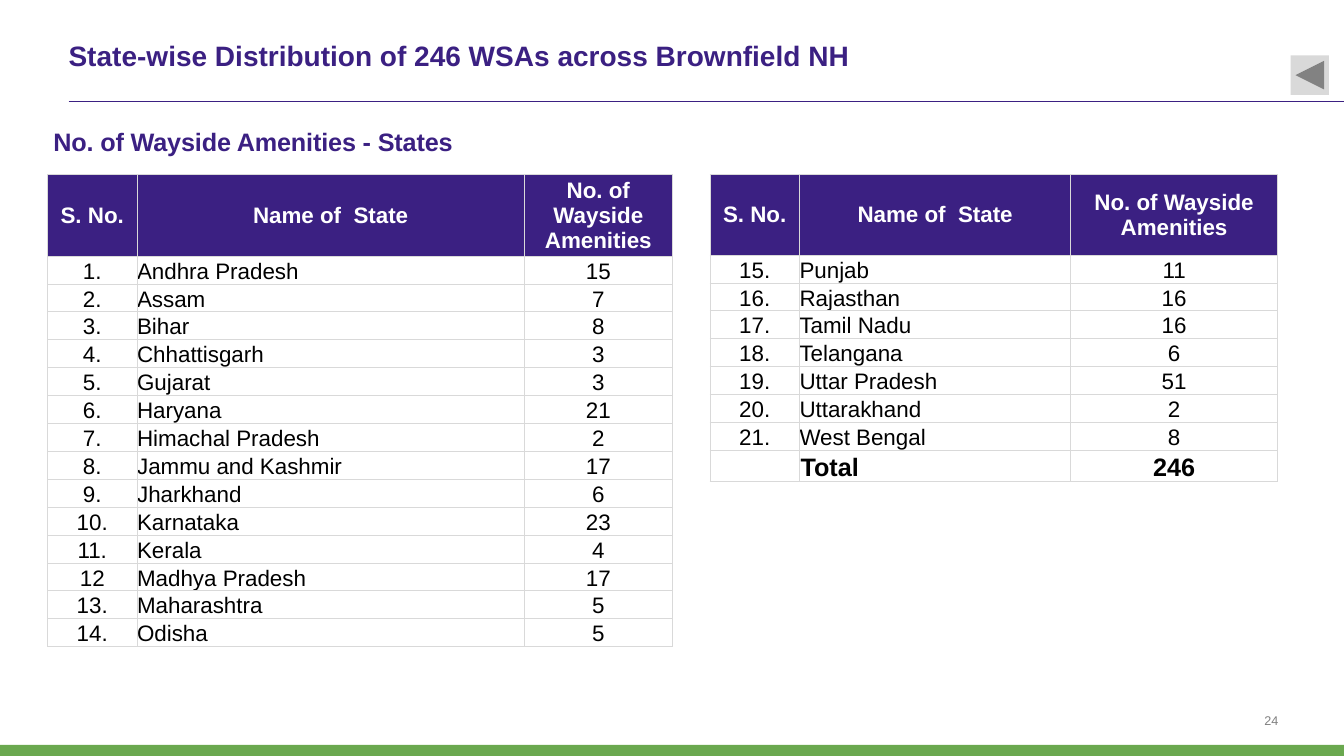
from pptx import Presentation
from pptx.dml.color import RGBColor
from pptx.enum.shapes import MSO_CONNECTOR, MSO_SHAPE
from pptx.enum.text import MSO_ANCHOR, MSO_AUTO_SIZE, PP_ALIGN
from pptx.oxml import parse_xml
from pptx.oxml.ns import nsdecls
from pptx.util import Pt

EMU_PER_PX = 9144  # 100 px to the inch
PURPLE, GREEN, GREY, LIGHT_GREY = "3B2082", "6AA84F", "808080", "D9D9D9"
WHITE, BLACK = "FFFFFF", "000000"
LEFT, CENTER, RIGHT = PP_ALIGN.LEFT, PP_ALIGN.CENTER, PP_ALIGN.RIGHT
MARGIN_NAMES = ("margin_left", "margin_top", "margin_right", "margin_bottom")
NO_MARGINS, THIN_MARGINS = (0, 0, 0, 0), (1, 1, 1, 0)

HEADERS = ["S. No.", "Name of  State", "No. of Wayside Amenities"]
AMENITIES = [
    ("Andhra Pradesh", 15), ("Assam", 7), ("Bihar", 8), ("Chhattisgarh", 3),
    ("Gujarat", 3), ("Haryana", 21), ("Himachal Pradesh", 2),
    ("Jammu and Kashmir", 17), ("Jharkhand", 6), ("Karnataka", 23),
    ("Kerala", 4), ("Madhya Pradesh", 17), ("Maharashtra", 5), ("Odisha", 5),
    ("Punjab", 11), ("Rajasthan", 16), ("Tamil Nadu", 16), ("Telangana", 6),
    ("Uttar Pradesh", 51), ("Uttarakhand", 2), ("West Bengal", 8),
]
LEFT_TABLE_STATES = 14


def px(length):
    return length * EMU_PER_PX


def color(hex_string):
    return RGBColor.from_string(hex_string)


def set_attributes(target, values):
    for name, value in values.items():
        setattr(target, name, value)


def margins(lengths):
    return {name: px(length) for name, length in zip(MARGIN_NAMES, lengths)}


class SlideBuilder:
    """Holds the font and the current slide."""

    def __init__(self, slide, font_name="Arial"):
        self.slide = slide
        self.shapes = slide.shapes
        self.font_name = font_name

    def fill_text(self, text_frame, text, size, hex_color, bold=False, align=LEFT, spacing=0):
        """Fill the first paragraph; spacing is in hundredths of a point."""
        paragraph = text_frame.paragraphs[0]
        paragraph.alignment = align
        run = paragraph.add_run()
        run.text = text
        set_attributes(run.font, {"name": self.font_name, "size": Pt(size), "bold": bold})
        run.font.color.rgb = color(hex_color)
        if spacing:
            run._r.get_or_add_rPr().set("spc", str(spacing))

    def title(self, box, text, size):
        title = self.shapes.title
        set_attributes(title, dict(zip(("left", "top", "width", "height"), map(px, box))))
        set_attributes(title.text_frame, {
            "auto_size": MSO_AUTO_SIZE.NONE, "word_wrap": True,
            "vertical_anchor": MSO_ANCHOR.MIDDLE, **margins(NO_MARGINS)})
        self.fill_text(title.text_frame, text, size, PURPLE, bold=True)

    def text(self, box, text, size, hex_color, inset=0, anchor=MSO_ANCHOR.TOP, **style):
        text_frame = self.shapes.add_textbox(*map(px, box)).text_frame
        set_attributes(text_frame, {
            "word_wrap": True, "vertical_anchor": anchor, **margins([inset] * 4)})
        self.fill_text(text_frame, text, size, hex_color, **style)

    def shape(self, kind, box, hex_color, rotation=0):
        shape = self.shapes.add_shape(kind, *map(px, box))
        shape.rotation = rotation
        shape.shadow.inherit = False
        shape.fill.solid()
        shape.fill.fore_color.rgb = color(hex_color)
        shape.line.fill.background()

    def line(self, start, end, hex_color):
        connector = self.shapes.add_connector(
            MSO_CONNECTOR.STRAIGHT, *map(px, (*start, *end)))
        connector.line.color.rgb = color(hex_color)
        connector.line.width = Pt(1)
        connector._element.spPr.append(parse_xml(f"<a:effectLst {nsdecls('a')}/>"))

    def cell_borders(self, cell):
        properties = cell._tc.get_or_add_tcPr()
        for side in "LRTB":
            properties.append(parse_xml(
                f'<a:ln{side} {nsdecls("a")} w="{Pt(0.5)}"><a:solidFill>'
                f'<a:srgbClr val="{LIGHT_GREY}"/></a:solidFill></a:ln{side}>'))

    def cell(self, cell, text, column, header, total):
        thin = header or total or column == 0
        set_attributes(cell, {
            "vertical_anchor": MSO_ANCHOR.MIDDLE if header else MSO_ANCHOR.BOTTOM,
            **margins(THIN_MARGINS if thin else NO_MARGINS)})
        self.cell_borders(cell)
        if header:
            cell.fill.solid()
            cell.fill.fore_color.rgb = color(PURPLE)
        else:
            cell.fill.background()
        if text:
            self.fill_text(cell.text_frame, text, 18 if total else 16,
                           WHITE if header else BLACK, bold=header or total,
                           align=CENTER if header or column != 1 else LEFT)

    def table(self, box, column_widths, header_height, rows):
        rows = [HEADERS] + rows
        frame = self.shapes.add_table(len(rows), len(HEADERS), *map(px, box))
        table = frame.table
        set_attributes(table, {"first_row": False, "horz_banding": False})
        for column, width in zip(table.columns, column_widths):
            column.width = px(width)
        for index, values in enumerate(rows):
            header, total = index == 0, values[1] == "Total"
            table.rows[index].height = px(header_height if header else 21)
            for column, text in enumerate(values):
                self.cell(table.cell(index, column), text, column, header, total)
        frame.height = px(box[3])


def main():
    presentation = Presentation()
    presentation.slide_width, presentation.slide_height = px(1333), px(750)
    builder = SlideBuilder(presentation.slides.add_slide(presentation.slide_layouts[5]))

    builder.line((68, 101), (1333, 101), PURPLE)
    builder.text((1154, 703, 114, 19), "24", 9, GREY, anchor=MSO_ANCHOR.BOTTOM, align=RIGHT)
    builder.shape(MSO_SHAPE.RECTANGLE, (0, 739, 1333, 11), GREEN)
    builder.title((68, 12, 1212, 86),
                  "State-wise Distribution of 246 WSAs across Brownfield NH", 20)

    # Number 12 is shown without a full stop.
    rows = [["12" if number == 12 else f"{number}.", state, str(count)]
            for number, (state, count) in enumerate(AMENITIES, 1)]
    total = ["", "Total", str(sum(count for _, count in AMENITIES))]
    builder.table((47, 173, 620, 469), (89, 384, 147), 46, rows[:LEFT_TABLE_STATES])
    builder.text((47, 119, 696, 38), "No. of Wayside Amenities - States", 18, PURPLE,
                 inset=6, bold=True, spacing=-10)
    builder.table((704, 173, 563, 305), (89, 269, 205), 80,
                  rows[LEFT_TABLE_STATES:] + [total])

    builder.shape(MSO_SHAPE.ACTION_BUTTON_FORWARD_OR_NEXT, (1280, 55, 38, 39),
                  LIGHT_GREY, rotation=180)
    presentation.save("out.pptx")


if __name__ == "__main__":
    main()
